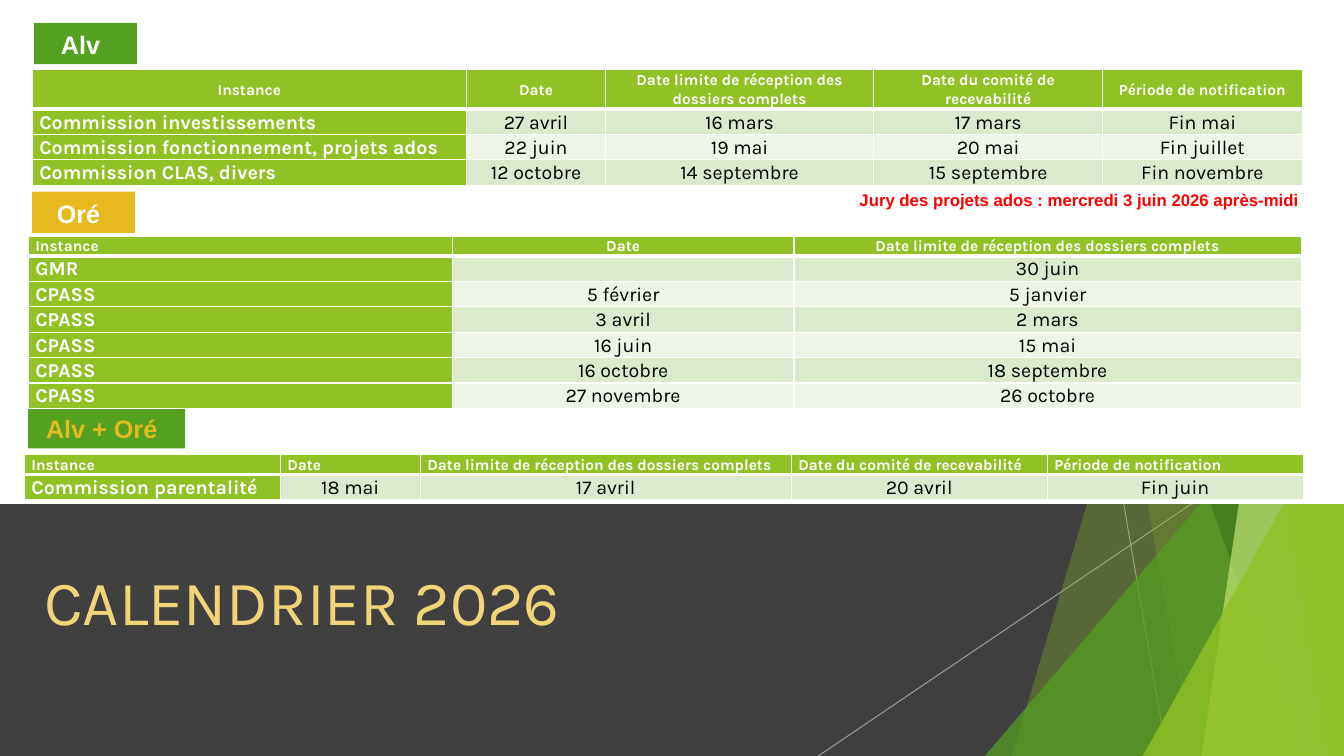
from lxml import etree
from pptx import Presentation
from pptx.dml.color import RGBColor
from pptx.enum.shapes import MSO_CONNECTOR, MSO_SHAPE
from pptx.enum.text import MSO_ANCHOR, MSO_AUTO_SIZE, PP_ALIGN
from pptx.oxml.ns import qn
from pptx.util import Cm, Pt

RECT = MSO_SHAPE.RECTANGLE
TRIANGLE = MSO_SHAPE.ISOSCELES_TRIANGLE
STRAIGHT = MSO_CONNECTOR.STRAIGHT
MIDDLE, TOP = MSO_ANCHOR.MIDDLE, MSO_ANCHOR.TOP
NO_FIT = MSO_AUTO_SIZE.NONE
LEFT, CENTER, JUSTIFY = PP_ALIGN.LEFT, PP_ALIGN.CENTER, PP_ALIGN.JUSTIFY

WHITE = RGBColor(0xFF, 0xFF, 0xFF)
BLACK = RGBColor(0x00, 0x00, 0x00)
DARK = RGBColor(0x40, 0x40, 0x40)
GREY = RGBColor(0xBF, 0xBF, 0xBF)
LIME = RGBColor(0x90, 0xC2, 0x26)
GREEN = RGBColor(0x54, 0xA0, 0x21)
FOREST = RGBColor(0x3F, 0x78, 0x19)
PALE_LIME = RGBColor(0xC0, 0xE4, 0x74)
GOLD = RGBColor(0xE6, 0xB9, 0x1E)
SAND = RGBColor(0xF0, 0xD5, 0x78)
RED = RGBColor(0xFF, 0x00, 0x00)
BANDS = [RGBColor(0xEE, 0xF4, 0xE8), RGBColor(0xDB, 0xE9, 0xCD)]

W, H, SPLIT = 33.87, 19.05, 12.7


def write(tf, text, align, color, size, font="Karla", bold=True):
    p = tf.paragraphs[0]
    for key, value in {"alignment": align, "line_spacing": 1.07, "space_after": Pt(8)}.items():
        setattr(p, key, value)
    if not text:
        etree.SubElement(p._p, qn("a:endParaRPr"), sz="1200")
        return
    r = p.add_run()
    r.text = text
    for key, value in {"name": font, "size": Pt(size), "bold": bold}.items():
        setattr(r.font, key, value)
    r.font.color.rgb = color


def paint(sp, color, alpha=100):
    sp.shadow.inherit = False
    sp.fill.solid()
    sp.fill.fore_color.rgb = color
    sp.line.fill.background()
    if alpha < 100:
        clr = sp._element.spPr.find(qn("a:solidFill"))[0]
        etree.SubElement(clr, qn("a:alpha"), val=str(alpha * 1000))


prs = Presentation()
prs.slide_width, prs.slide_height = Cm(W), Cm(H)
s = prs.slides.add_slide(prs.slide_layouts[5])

paint(s.shapes.add_shape(RECT, 0, Cm(SPLIT), Cm(W), Cm(H - SPLIT)), DARK)

facets = s.shapes.add_group_shape().shapes
for x1, x2 in [(28.32, 29.41), (30.02, 20.62)]:
    line = facets.add_connector(STRAIGHT, Cm(x1), Cm(SPLIT), Cm(x2), Cm(H))
    line.line.width = Pt(0.75)
    line.line.color.rgb = GREY
    spPr = line._element.spPr
    clr = spPr.find(qn("a:ln")).find(qn("a:solidFill"))[0]
    etree.SubElement(clr, qn("a:alpha"), val="70000")
    etree.SubElement(spPr, qn("a:effectLst"))

for top_x, bottom_x, top, color, alpha in [
    (31.19, 25.5, 0, LIME, 30),
    (26.67, 30.05, 0, LIME, 20),
    (W, 24.82, 8.46, GREEN, 72),
    (25.93, 32.79, 0, FOREST, 70),
    (33.1, 30.28, 0, PALE_LIME, 70),
    (30.38, 33.48, 0, LIME, 65),
    (W, 28.8, 9.98, LIME, 80),
]:
    if top:
        sp = facets.add_shape(TRIANGLE, Cm(bottom_x), Cm(top), Cm(W - bottom_x), Cm(H - top))
        sp.adjustments[0] = 1
    else:
        fb = facets.build_freeform(Cm(top_x), 0)
        fb.add_line_segments([(Cm(W), 0), (Cm(W), Cm(H)), (Cm(bottom_x), Cm(H))])
        sp = fb.convert_to_shape()
    paint(sp, color, alpha)

paint(s.shapes.add_shape(RECT, 0, 0, Cm(W), Cm(SPLIT)), WHITE)

title = s.shapes.title
s.shapes._spTree.append(title._element)
for key, value in {"left": 0.86, "top": 14.07, "width": 25.76, "height": 1.8}.items():
    setattr(title, key, Cm(value))
tf = title.text_frame
for key, value in {"auto_size": NO_FIT, "vertical_anchor": TOP, "margin_top": Cm(0.1)}.items():
    setattr(tf, key, value)
write(tf, "CALENDRIER 2026", LEFT, SAND, 45, bold=False)
tf.paragraphs[0].line_spacing = 1.0

for text, left, top, width, fill, color in [
    ("Alv", 0.86, 0.58, 2.59, GREEN, WHITE),
    ("Oré", 0.81, 4.83, 2.59, GOLD, WHITE),
    ("Alv + Oré", 0.71, 10.26, 3.96, GREEN, GOLD),
]:
    sp = s.shapes.add_shape(RECT, Cm(left), Cm(top), Cm(width), Cm(1.04))
    paint(sp, fill)
    tf = sp.text_frame
    for key, value in {"vertical_anchor": MIDDLE, "margin_right": Cm(0.5)}.items():
        setattr(tf, key, value)
    write(tf, text, CENTER, color, 18, "Arial")

tf = s.shapes.add_textbox(Cm(21.41), Cm(4.62), Cm(12.2), Cm(0.79)).text_frame
tf.word_wrap = True
write(tf, "Jury des projets ados : mercredi 3 juin 2026 après-midi", JUSTIFY, RED, 12, "Arial")

LIMIT = "Date limite de réception des dossiers complets"
COMMITTEE = "Date du comité de recevabilité"
PERIOD = "Période de notification"

for left, top, header, justified, cols, rows in [
    (0.81, 1.75, 0.99, 0, [10.95, 3.5, 6.76, 5.77, 5.03], [
        ["Instance", "Date", LIMIT, COMMITTEE, PERIOD],
        ["Commission investissements", "27 avril", "16 mars", "17 mars", "Fin mai"],
        ["Commission fonctionnement, projets ados", "22 juin", "19 mai", "20 mai", "Fin juillet"],
        ["Commission CLAS, divers", "12 octobre", "14 septembre", "15 septembre", "Fin novembre"],
    ]),
    (0.71, 5.95, 0.48, 1, [10.69, 8.61, 12.78], [
        ["Instance", "Date", LIMIT],
        ["GMR", "", "30 juin"],
        ["CPASS", "5 février", "5 janvier"],
        ["CPASS", "3 avril", "2 mars"],
        ["CPASS", "16 juin", "15 mai"],
        ["CPASS", "16 octobre", "18 septembre"],
        ["CPASS", "27 novembre", "26 octobre"],
    ]),
    (0.61, 11.46, 0.48, 5, [6.45, 3.53, 9.35, 6.45, 6.45], [
        ["Instance", "Date", LIMIT, COMMITTEE, PERIOD],
        ["Commission parentalité", "18 mai", "17 avril", "20 avril", "Fin juin"],
    ]),
]:
    heights = [header] + [0.64] * (len(rows) - 1)
    tbl = s.shapes.add_table(len(rows), len(cols), Cm(left), Cm(top),
                             Cm(sum(cols)), Cm(sum(heights))).table
    for col, width in zip(tbl.columns, cols):
        col.width = Cm(width)
    for i, values in enumerate(rows):
        tbl.rows[i].height = Cm(heights[i])
        for j, text in enumerate(values):
            cell = tbl.cell(i, j)
            for key, value in {"margin_left": Cm(0.18), "margin_right": Cm(0.18), "margin_top": 0,
                               "margin_bottom": 0, "vertical_anchor": MIDDLE}.items():
                setattr(cell, key, value)
            for side in "LRTB":
                width = Pt(3) if (i, side) in [(0, "B"), (1, "T")] else Pt(1)
                ln = etree.SubElement(cell._tc.tcPr, qn("a:ln" + side), w=str(width))
                etree.SubElement(etree.SubElement(ln, qn("a:solidFill")), qn("a:srgbClr"), val=str(WHITE))
            head = i == 0 or j == 0
            cell.fill.solid()
            cell.fill.fore_color.rgb = LIME if head else BANDS[i % 2]
            align = JUSTIFY if j < (justified if i == 0 else 1) else CENTER
            write(cell.text_frame, text, align, WHITE if head else BLACK, 14 if i else 11, bold=head)

prs.save("out.pptx")
